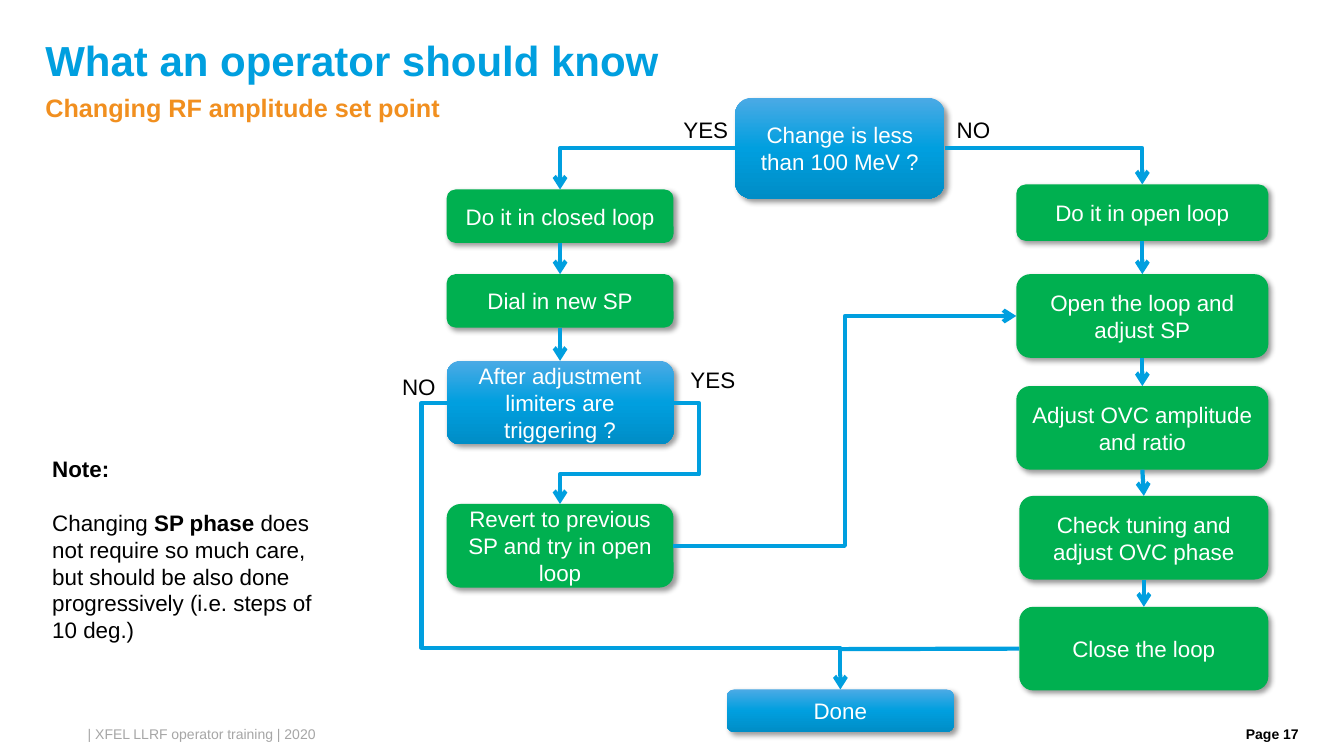
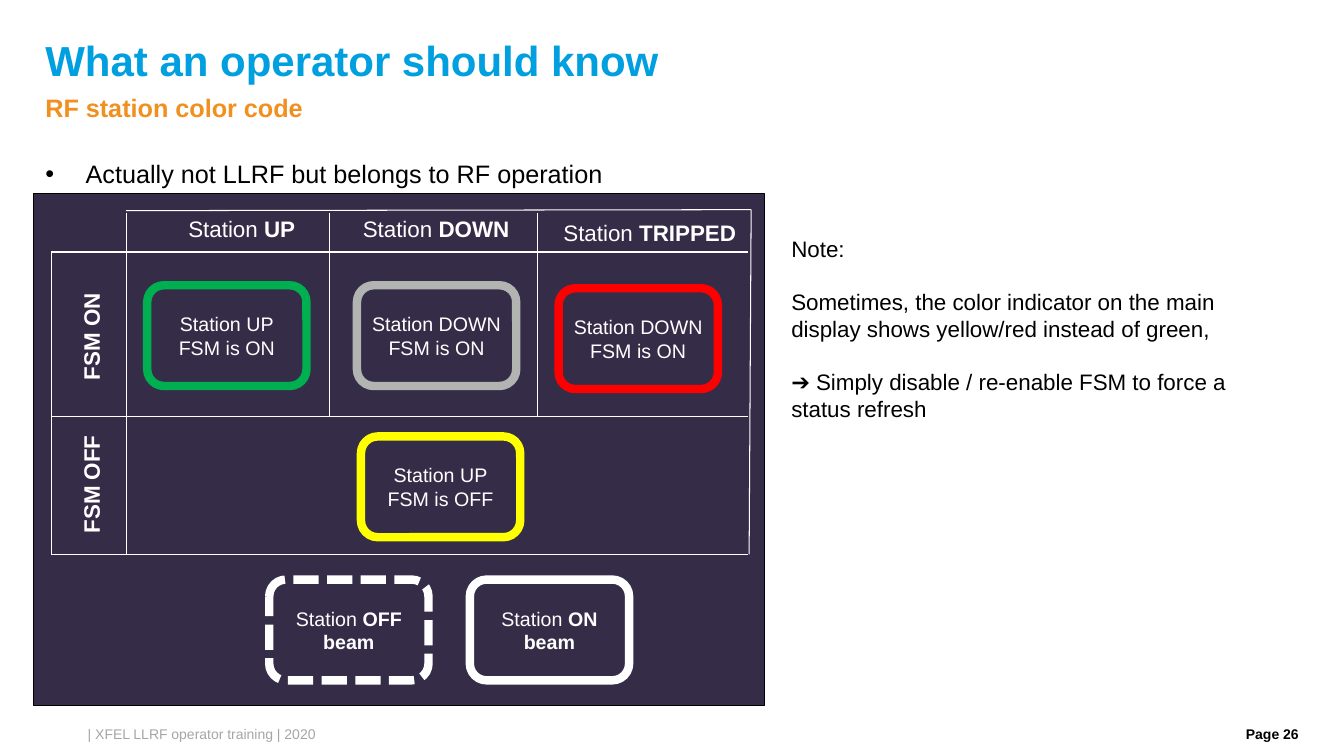
from lxml import etree
from pptx import Presentation
from pptx.dml.color import RGBColor
from pptx.enum.dml import MSO_LINE
from pptx.enum.shapes import MSO_CONNECTOR, MSO_SHAPE
from pptx.enum.text import MSO_ANCHOR, MSO_AUTO_SIZE, PP_ALIGN
from pptx.oxml import parse_xml
from pptx.oxml.ns import nsdecls, qn
from pptx.util import Pt

PX = 9144  # 100 px to the inch
FONT = "Arial"
BLUE, ORANGE, GREEN = "009FDF", "F18F1F", "00B050"
BLACK, WHITE, GREY, NIGHT = "000000", "FFFFFF", "A6A6A6", "352D48"
TOP, LEFT, BOTTOM, RIGHT = range(4)
rgb = RGBColor.from_string


def write(shape, paragraphs, size, color, bold=False, align=PP_ALIGN.LEFT,
          spacing=None, gap=0, **frame_format):
    """Fill a shape with paragraphs; text between ** marks is bold."""
    frame = shape.text_frame
    frame.word_wrap = True
    for name, value in frame_format.items():
        setattr(frame, name, value)
    for i, text in enumerate(paragraphs):
        paragraph = frame.add_paragraph() if i else frame.paragraphs[0]
        paragraph.alignment = align
        paragraph.line_spacing = spacing
        if i and gap:
            paragraph.space_before = Pt(gap)
        for j, part in enumerate(text.split("**")):
            if part:
                run = paragraph.add_run()
                run.text = part
                style = {"name": FONT, "size": Pt(size), "bold": bold or j % 2 == 1}
                for name, value in style.items():
                    setattr(run.font, name, value)
                run.font.color.rgb = rgb(color)
    return shape


def connect(slide, start, end, color, width, kind=MSO_CONNECTOR.STRAIGHT):
    """Draw a line from (x, y) to (x, y), in px, without shadow."""
    line = slide.shapes.add_connector(kind, *[v * PX for v in (*start, *end)])
    line.line.color.rgb = rgb(color)
    line.line.width = Pt(width)
    etree.SubElement(line._element.spPr, qn("a:effectLst"))
    return line


prs = Presentation()
prs.slide_width, prs.slide_height = 1333 * PX, 750 * PX
flat = dict.fromkeys(("margin_left", "margin_top", "margin_right", "margin_bottom"), 0)

# Title, subtitle and footer of both slides
slides = []
for subtitle, page in (("Changing RF amplitude set point", 17),
                       ("RF station color code", 26)):
    slide = prs.slides.add_slide(prs.slide_layouts[5])
    title = slide.shapes.title
    title.left, title.top, title.width, title.height = [
        v * PX for v in (45, 38, 1244, 49)]
    write(title, ["What an operator should know"], 30, BLUE, True, spacing=0.9,
          vertical_anchor=MSO_ANCHOR.MIDDLE, auto_size=MSO_AUTO_SIZE.NONE, **flat)
    for place, text, size, color, bold, align, spacing in (
            ((45, 89, 1244, 41), subtitle, 18, ORANGE, True, PP_ALIGN.LEFT, 1.1),
            ((87, 720, 1088, 20), "| XFEL LLRF operator training | 2020", 10, GREY,
             False, PP_ALIGN.LEFT, None),
            ((1186, 720, 102, 20), f"Page {page}", 10, BLACK, True,
             PP_ALIGN.RIGHT, None)):
        box = slide.shapes.add_textbox(*[v * PX for v in place])
        write(box, [text], size, color, bold, align, spacing, **flat)
    slides.append(slide)
flow, codes = slides

# Slide 1: steps of the flowchart, questions and end in blue
GRADIENT = f"""<a:gradFill {nsdecls('a')} rotWithShape="1"><a:gsLst>
<a:gs pos="0"><a:srgbClr val="4BAAE5"/></a:gs>
<a:gs pos="50000"><a:srgbClr val="{BLUE}"/></a:gs>
<a:gs pos="100000"><a:srgbClr val="008DC6"/></a:gs>
</a:gsLst><a:lin ang="5400000" scaled="0"/></a:gradFill>"""
SHADOW = f"""<a:effectLst {nsdecls('a')}>
<a:outerShdw blurRad="50800" dist="38100" dir="2700000" algn="tl" rotWithShape="0">
<a:srgbClr val="{BLACK}"><a:alpha val="40000"/></a:srgbClr></a:outerShdw></a:effectLst>"""

steps = {}
for key, place, text in (
        ("size?", (729, 97, 208, 100), "Change is less than 100 MeV ?"),
        ("closed", (443, 188, 225, 53), "Do it in closed loop"),
        ("dial", (443, 272, 225, 53), "Dial in new SP"),
        ("limiters?", (443, 358, 225, 83), "After adjustment limiters are triggering ?"),
        ("revert", (443, 500, 225, 83), "Revert to previous SP and try in open loop"),
        ("open", (1008, 183, 250, 56), "Do it in open loop"),
        ("adjust", (1008, 272, 250, 83), "Open the loop and adjust SP"),
        ("ratio", (1008, 383, 250, 83), "Adjust OVC amplitude and ratio"),
        ("tuning", (1011, 492, 247, 83), "Check tuning and adjust OVC phase"),
        ("close", (1011, 602, 247, 83), "Close the loop"),
        ("done", (721, 684, 225, 42), "Done")):
    step = flow.shapes.add_shape(MSO_SHAPE.ROUNDED_RECTANGLE, *[v * PX for v in place])
    step.line.fill.background()
    if key.endswith("?") or key == "done":
        step._element.spPr.find(qn("a:prstGeom")).addnext(parse_xml(GRADIENT))
    else:
        step.fill.solid()
        step.fill.fore_color.rgb = rgb(GREEN)
    step._element.spPr.append(parse_xml(SHADOW))
    write(step, [text], 16, WHITE, align=PP_ALIGN.CENTER,
          vertical_anchor=MSO_ANCHOR.MIDDLE)
    steps[key] = step

# Arrows between the steps; bends are shares of width and height
for source, out, target, into, preset, bends in (
        ("size?", LEFT, "closed", TOP, "bentConnector2", ()),
        ("size?", RIGHT, "open", TOP, "bentConnector2", ()),
        ("closed", BOTTOM, "dial", TOP, "line", ()),
        ("dial", BOTTOM, "limiters?", TOP, "line", ()),
        ("limiters?", LEFT, "done", TOP, "bentConnector4", (-6400, 85500)),
        ("limiters?", RIGHT, "revert", TOP, "bentConnector4", (-22200, 70800)),
        ("revert", RIGHT, "adjust", LEFT, "bentConnector3", (50000,)),
        ("open", BOTTOM, "adjust", TOP, "line", ()),
        ("adjust", BOTTOM, "ratio", TOP, "line", ()),
        ("ratio", BOTTOM, "tuning", TOP, "line", ()),
        ("tuning", BOTTOM, "close", TOP, "line", ())):
    kind = MSO_CONNECTOR.STRAIGHT if preset == "line" else MSO_CONNECTOR.ELBOW
    arrow = connect(flow, (0, 0), (0, 0), BLUE, 3, kind)
    arrow.begin_connect(steps[source], out)
    arrow.end_connect(steps[target], into)
    properties = arrow._element.spPr
    etree.SubElement(properties.find(qn("a:ln")), qn("a:tailEnd"), type="arrow")
    geometry = properties.find(qn("a:prstGeom"))
    geometry.set("prst", preset)
    for i, bend in enumerate(bends, 1):
        etree.SubElement(geometry.find(qn("a:avLst")), qn("a:gd"),
                         name=f"adj{i}" if len(bends) > 1 else "adj1",
                         fmla=f"val {bend}")
joining = connect(flow, (1011, 644), (833, 644), BLUE, 3)
joining.begin_connect(steps["close"], LEFT)

# Answers and note
for answer, left, top, width in (("YES", 668, 110, 65), ("NO", 939, 110, 54),
                                 ("NO", 389, 365, 54), ("YES", 675, 358, 65)):
    box = flow.shapes.add_textbox(left * PX, top * PX, width * PX, 37 * PX)
    write(box, [answer], 16, BLACK, word_wrap=False)
note = flow.shapes.add_textbox(42 * PX, 447 * PX, 283 * PX, 199 * PX)
write(note, ["**Note:**", "Changing **SP phase **does not require so much care, but "
             "should be also done progressively (i.e. steps of 10 deg.)"],
      16, BLACK, gap=19)

# Slide 2: dark panel and bullet
panel = codes.shapes.add_shape(MSO_SHAPE.RECTANGLE, 33 * PX, 192 * PX, 725 * PX, 508 * PX)
panel.shadow.inherit = False
panel.fill.solid()
panel.fill.fore_color.rgb = rgb(NIGHT)
panel.line.color.rgb = rgb(BLACK)
panel.line.width = Pt(0.75)

remark = codes.shapes.add_textbox(45 * PX, 154 * PX, 1244 * PX, 36 * PX)
write(remark, ["Actually not LLRF but belongs to RF operation"], 18, BLACK,
      spacing=1.1, **flat)
bullet = remark.text_frame.paragraphs[0]._p.get_or_add_pPr()
bullet.set("marL", str(40 * PX))
bullet.set("indent", str(-40 * PX))
etree.SubElement(bullet, qn("a:buFont"), typeface=FONT)
etree.SubElement(bullet, qn("a:buChar"), char="•")

# Grid lines
for start, end in (
        *[((51, y), (742, y)) for y in (250, 413, 550)],
        *[((x, 211), (x, 413)) for x in (327, 533)],
        ((51, 250), (51, 550)), ((125, 211), (125, 550)),
        ((125, 209), (745, 208)), ((745, 208), (743, 550))):
    connect(codes, start, end, WHITE, 0.75)

# Column and row headings
for heading, place, angle in (
        ("Station **UP**", (177, 209, 127, 37), 0),
        ("Station **DOWN**", (350, 209, 167, 37), 0),
        ("Station **TRIPPED**", (549, 213, 193, 37), 0),
        ("**FSM ON**", (37, 315, 107, 37), 270),
        ("**FSM OFF**", (31, 461, 119, 37), 270)):
    box = codes.shapes.add_textbox(*[v * PX for v in place])
    box.rotation = angle
    write(box, [heading], 16, WHITE, word_wrap=False)

# Station indicators
for left, top, color, dash, lines in (
        (146, 283, GREEN, None, ["Station UP", "FSM is ON"]),
        (354, 283, "B2B4B2", None, ["Station DOWN", "FSM is ON"]),
        (554, 286, "FF0000", None, ["Station DOWN", "FSM is ON"]),
        (358, 433, "FFFF00", None, ["Station UP", "FSM is OFF"]),
        (267, 575, WHITE, MSO_LINE.SQUARE_DOT, ["Station **OFF beam**"]),
        (466, 575, WHITE, None, ["Station **ON beam**"])):
    station = codes.shapes.add_shape(MSO_SHAPE.ROUNDED_RECTANGLE, left * PX, top * PX,
                                     158 * PX, 100 * PX)
    station.shadow.inherit = False
    station.fill.solid()
    station.fill.fore_color.rgb = rgb(NIGHT)
    station.line.color.rgb = rgb(color)
    station.line.width = Pt(6)
    station.line.dash_style = dash
    write(station, lines, 14, WHITE, align=PP_ALIGN.CENTER,
          vertical_anchor=MSO_ANCHOR.MIDDLE)

# Note beside the panel
note = codes.shapes.add_textbox(775 * PX, 228 * PX, 500 * PX, 199 * PX)
write(note, ["Note:", "Sometimes, the color indicator on the main display shows "
             "yellow/red instead of green,",
             "➔ Simply disable / re-enable FSM to force a status refresh"],
      16, BLACK, gap=19)

prs.save("out.pptx")
